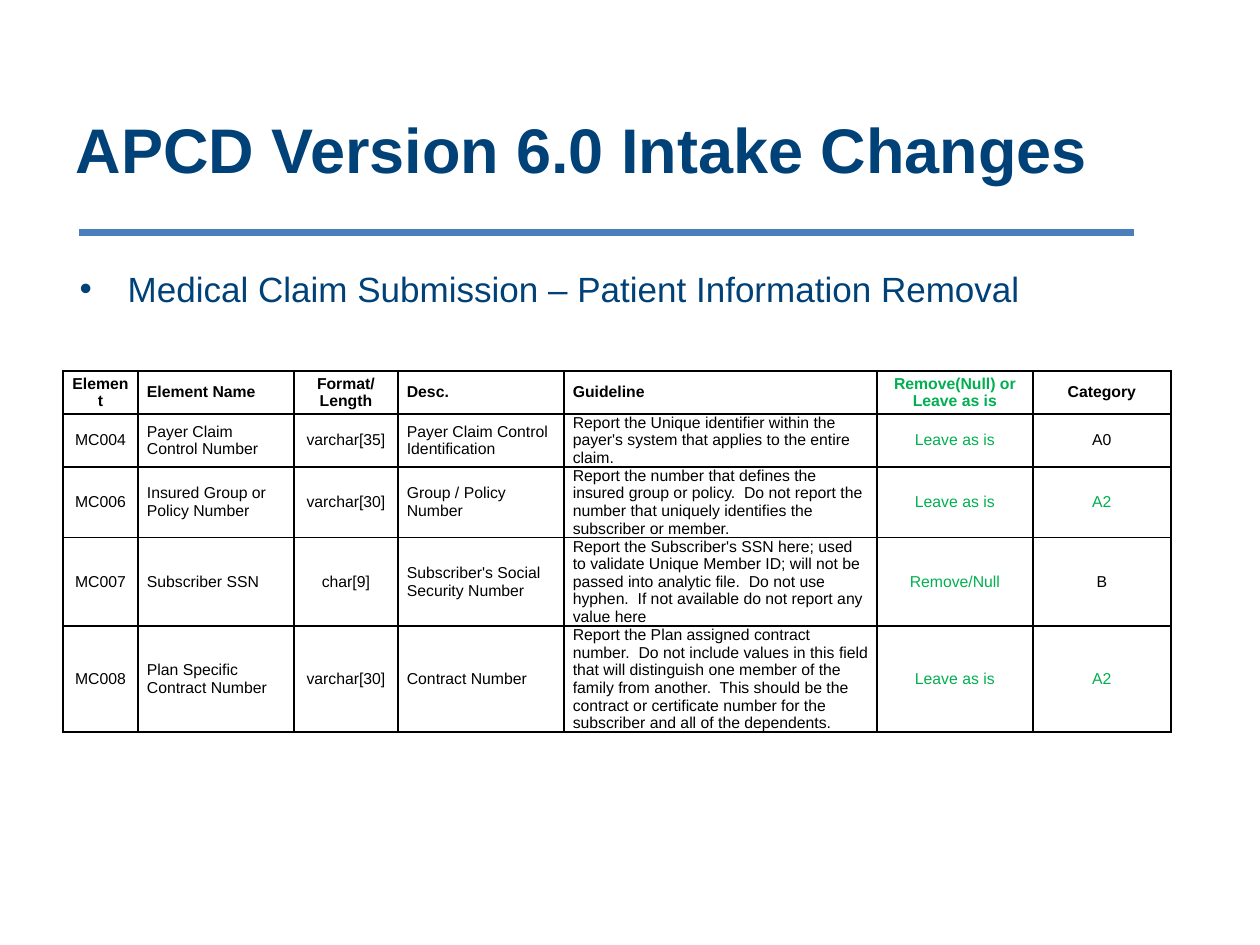
from lxml.etree import SubElement
from pptx import Presentation
from pptx.dml.color import RGBColor
from pptx.enum.shapes import MSO_CONNECTOR
from pptx.enum.text import MSO_ANCHOR, MSO_AUTO_SIZE, PP_ALIGN
from pptx.oxml.ns import qn
from pptx.util import Pt

EMU_PER_PX = 914400 / 126
NAVY = RGBColor(0x00, 0x41, 0x78)
RULE_BLUE = RGBColor(0x4B, 0x7E, 0xBC)
GREEN = RGBColor(0x00, 0xB0, 0x50)
BLACK = RGBColor(0x00, 0x00, 0x00)

COLUMN_WIDTHS = (75, 156, 104, 166, 313, 156, 138)
ROW_HEIGHTS = (43, 43, 64, 64, 86)
CENTERED_COLUMNS = {0, 2, 5, 6}
ACTION_COLUMN = 5
ROWS = (
    ("Element", "Element Name", "Format/Length", "Desc.", "Guideline",
     "Remove(Null) or Leave as is", "Category"),
    ("MC004", "Payer Claim Control Number", "varchar[35]",
     "Payer Claim Control Identification",
     "Report the Unique identifier within the payer's system that applies to "
     "the entire claim.", "Leave as is", "A0"),
    ("MC006", "Insured Group or Policy Number", "varchar[30]",
     "Group / Policy Number",
     "Report the number that defines the insured group or policy.  Do not "
     "report the number that uniquely identifies the subscriber or member.",
     "Leave as is", "A2"),
    ("MC007", "Subscriber SSN", "char[9]", "Subscriber's Social Security Number",
     "Report the Subscriber's SSN here; used to validate Unique Member ID; will "
     "not be passed into analytic file.  Do not use hyphen.  If not available "
     "do not report any value here", "Remove/Null", "B"),
    ("MC008", "Plan Specific Contract Number", "varchar[30]", "Contract Number",
     "Report the Plan assigned contract number.  Do not include values in this "
     "field that will distinguish one member of the family from another.  This "
     "should be the contract or certificate number for the subscriber and all "
     "of the dependents.", "Leave as is", "A2"),
)


def px(length):
    return round(length * EMU_PER_PX)


def write(frame, text, *, size, color=BLACK, bold=False, align=PP_ALIGN.LEFT,
          bullet_indent=None):
    paragraph = frame.paragraphs[0]
    paragraph.text = text
    paragraph.alignment = align
    paragraph.space_before = Pt(0)
    if bullet_indent:
        properties = paragraph._p.get_or_add_pPr()
        properties.set("marL", str(px(bullet_indent)))
        properties.set("indent", str(-px(bullet_indent)))
        SubElement(properties, qn("a:buFont"), typeface="Arial")
        SubElement(properties, qn("a:buChar"), char="•")
    font = paragraph.runs[0].font
    font.name = "Arial"
    font.size = Pt(size)
    font.bold = bold
    font.color.rgb = color


def fill_placeholder(placeholder, box, text, *, anchor, **text_format):
    placeholder.left, placeholder.top, placeholder.width, placeholder.height = map(px, box)
    frame = placeholder.text_frame
    frame.word_wrap = True
    frame.auto_size = MSO_AUTO_SIZE.NONE
    frame.vertical_anchor = anchor
    write(frame, text, **text_format)


def add_rule(slide, left, right, y):
    rule = slide.shapes.add_connector(
        MSO_CONNECTOR.STRAIGHT, px(left), px(y), px(right), px(y))
    rule.line.color.rgb = RULE_BLUE
    rule.line.width = Pt(4)
    SubElement(rule._element.spPr, qn("a:effectLst"))


def border_cell(cell):
    properties = cell._tc.get_or_add_tcPr()
    for side in ("lnL", "lnR", "lnT", "lnB"):
        line = SubElement(properties, qn(f"a:{side}"), w=str(Pt(1)))
        fill = SubElement(line, qn("a:solidFill"))
        SubElement(fill, qn("a:srgbClr"), val=str(BLACK))


def text_color(row, column, text):
    is_green = column == ACTION_COLUMN or (row > 0 and text == "A2")
    return GREEN if is_green else BLACK


def add_changes_table(slide, left, top):
    table = slide.shapes.add_table(
        len(ROWS), len(COLUMN_WIDTHS), px(left), px(top),
        px(sum(COLUMN_WIDTHS)), px(sum(ROW_HEIGHTS))).table
    table.first_row = table.horz_banding = False
    for column, width in zip(table.columns, COLUMN_WIDTHS):
        column.width = px(width)
    for row, height in zip(table.rows, ROW_HEIGHTS):
        row.height = px(height)
    for r, row_texts in enumerate(ROWS):
        for c, text in enumerate(row_texts):
            cell = table.cell(r, c)
            border_cell(cell)
            cell.fill.background()
            cell.margin_left = cell.margin_right = px(9)
            cell.margin_top = cell.margin_bottom = 0
            cell.vertical_anchor = MSO_ANCHOR.MIDDLE
            align = PP_ALIGN.CENTER if c in CENTERED_COLUMNS else PP_ALIGN.LEFT
            write(cell.text_frame, text, size=9, bold=r == 0, align=align,
                  color=text_color(r, c, text))


def main():
    presentation = Presentation()
    presentation.slide_width = px(1260)
    presentation.slide_height = px(945)
    slide = presentation.slides.add_slide(presentation.slide_layouts[0])

    add_rule(slide, 79, 1134, 233)
    fill_placeholder(slide.shapes.title, (63, 78, 1071, 140),
                     "APCD Version 6.0 Intake Changes",
                     anchor=MSO_ANCHOR.MIDDLE, size=36, color=NAVY, bold=True)
    fill_placeholder(slide.placeholders[1], (67, 261, 1070, 567),
                     "Medical Claim Submission – Patient Information Removal",
                     anchor=MSO_ANCHOR.TOP, size=20, color=NAVY, bullet_indent=48)
    add_changes_table(slide, 63, 371)

    presentation.save("out.pptx")


if __name__ == "__main__":
    main()
